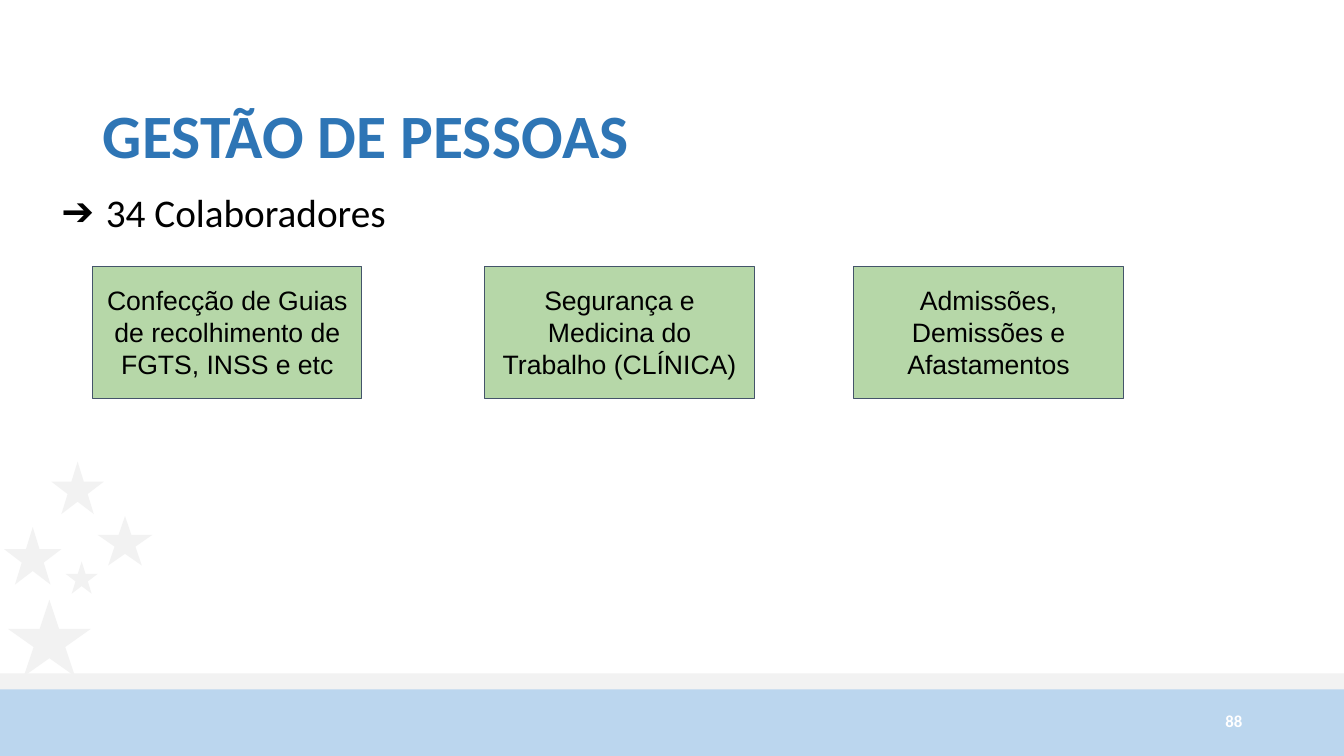
from lxml.etree import SubElement
from pptx import Presentation
from pptx.dml.color import RGBColor
from pptx.enum.shapes import MSO_SHAPE
from pptx.enum.text import MSO_ANCHOR, MSO_AUTO_SIZE, PP_ALIGN
from pptx.oxml.ns import qn
from pptx.util import Inches, Pt

WHITE = RGBColor(0xFF, 0xFF, 0xFF)
BLACK = RGBColor(0, 0, 0)
TITLE_BLUE = RGBColor(0x2E, 0x75, 0xB5)
FOOTER_BLUE = RGBColor(0xBB, 0xD6, 0xEE)
PALE_GRAY = RGBColor(0xF2, 0xF2, 0xF2)
GREEN = RGBColor(0xB6, 0xD7, 0xA8)
SLATE = RGBColor(0x44, 0x54, 0x6A)


def add_filled(kind, left, top, width, height, color):
    shape = slide.shapes.add_shape(
        kind, Inches(left), Inches(top), Inches(width), Inches(height))
    shape.shadow.inherit = False
    shape.fill.solid()
    shape.fill.fore_color.rgb = color
    shape.line.fill.background()
    return shape


def write(shape, text, font_name, size, color, align, anchor, inset, bold=False):
    frame = shape.text_frame
    frame.text = text
    frame.word_wrap = True
    frame.auto_size = MSO_AUTO_SIZE.NONE
    frame.vertical_anchor = anchor
    frame.margin_left = frame.margin_right = Inches(0.1)
    frame.margin_top = frame.margin_bottom = Inches(inset)
    paragraph = frame.paragraphs[0]
    paragraph.alignment = align
    paragraph.space_before = Pt(0)
    font = paragraph.runs[0].font
    font.name = font_name
    font.size = Pt(size)
    font.bold = bold
    font.color.rgb = color
    return paragraph


prs = Presentation()
prs.slide_width = Inches(13.33)
prs.slide_height = Inches(7.5)
slide = prs.slides.add_slide(prs.slide_layouts[1])
slide.background.fill.solid()
slide.background.fill.fore_color.rgb = WHITE

add_filled(MSO_SHAPE.RECTANGLE, 0, 6.82, 13.33, 0.68, FOOTER_BLUE)
add_filled(MSO_SHAPE.RECTANGLE, 0, 6.68, 13.33, 0.16, PALE_GRAY)

stars = [
    (0.04, 5.23, 0.57, 0.57),
    (0.65, 5.57, 0.32, 0.32),
    (0.08, 5.95, 0.82, 0.76),
    (0.51, 4.58, 0.52, 0.52),
    (0.97, 5.12, 0.54, 0.49),
]
for left, top, width, height in stars:
    add_filled(MSO_SHAPE.STAR_5_POINT, left, top, width, height, PALE_GRAY)

heading = slide.shapes.title
heading.left, heading.top = Inches(0.92), Inches(0.65)
heading.width, heading.height = Inches(11.5), Inches(1.45)
heading_line = write(heading, "GESTÃO DE PESSOAS", "Calibri", 44, TITLE_BLUE,
                     PP_ALIGN.LEFT, MSO_ANCHOR.MIDDLE, 0.05, bold=True)
heading_line.line_spacing = 0.9

page_number = slide.shapes.add_textbox(
    Inches(9.42), Inches(6.95), Inches(3), Inches(0.4))
write(page_number, "88", "Calibri", 12, WHITE,
      PP_ALIGN.RIGHT, MSO_ANCHOR.MIDDLE, 0.05, bold=True)

headcount = slide.placeholders[1]
headcount.left, headcount.top = Inches(0.45), Inches(1.77)
headcount.width, headcount.height = Inches(10.98), Inches(0.67)
headcount_line = write(headcount, "34 Colaboradores", "Calibri", 28, BLACK,
                       PP_ALIGN.LEFT, MSO_ANCHOR.TOP, 0.1)
properties = headcount_line._p.get_or_add_pPr()
properties.set("marL", str(Inches(0.5)))
properties.set("indent", str(Inches(-0.44)))
bullet_color = SubElement(properties, qn("a:buClr"))
SubElement(bullet_color, qn("a:srgbClr")).set("val", str(BLACK))
SubElement(properties, qn("a:buChar")).set("char", "➔")

activities = [
    (0.92, "Confecção de Guias de recolhimento de FGTS, INSS e etc"),
    (4.81, "Segurança e Medicina do Trabalho (CLÍNICA)"),
    (8.47, "Admissões, Demissões e Afastamentos"),
]
for left, activity in activities:
    card = add_filled(MSO_SHAPE.RECTANGLE, left, 2.64, 2.67, 1.31, GREEN)
    card.line.color.rgb = SLATE
    card.line.width = Pt(0.75)
    write(card, activity, "Arial", 19, BLACK,
          PP_ALIGN.CENTER, MSO_ANCHOR.MIDDLE, 0.1)

prs.save("out.pptx")
